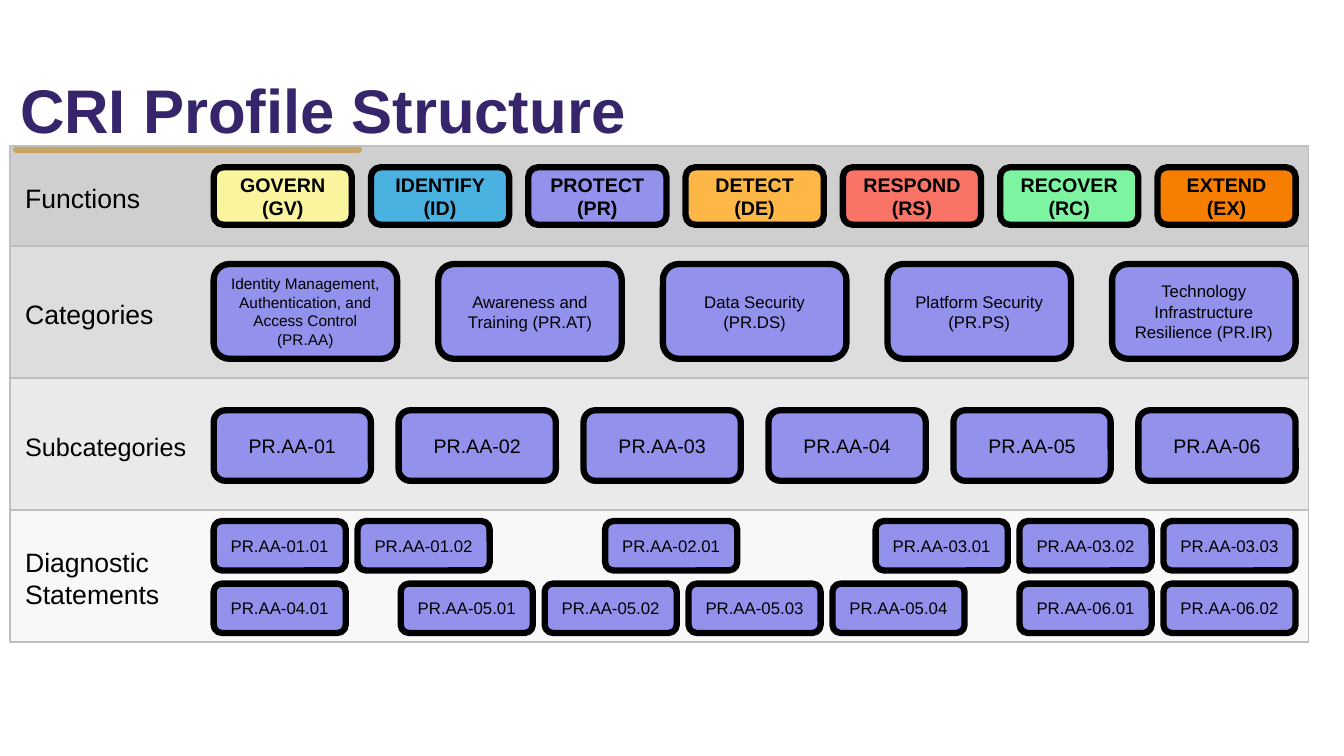
"""Build the CRI Profile Structure slide, with lengths as percentages of the slide's size."""
from dataclasses import dataclass
from typing import Any

from lxml.etree import SubElement
from pptx import Presentation
from pptx.dml.color import RGBColor
from pptx.enum.shapes import MSO_CONNECTOR, MSO_SHAPE
from pptx.enum.text import MSO_ANCHOR, PP_ALIGN
from pptx.oxml import parse_xml
from pptx.oxml.ns import nsdecls, qn
from pptx.util import Inches, Pt

WIDE, HIGH = 13.33, 7.5
LEFT, SPAN = 15.9, 80.5
EDGE, FULL = 0.75, 96.62
HUES = {
    "black": "000000", "title": "36256B", "gold": "F0A31F", "rule": "BFBFBF",
    "violet": "9292EC", "yellow": "F9F49D", "blue": "4AB2E1", "amber": "FCB746",
    "red": "F97367", "green": "7DF4A0", "orange": "F67E00",
    "dark": "A6A6A6", "mid": "BFBFBF", "light": "D9D9D9", "pale": "F2F2F2",
}
SHADOW = (
    f'<a:effectLst {nsdecls("a")}><a:outerShdw blurRad="38100" dist="38100" '
    'dir="2700000" algn="tl"><a:srgbClr val="000000"><a:alpha val="43137"/>'
    '</a:srgbClr></a:outerShdw></a:effectLst>'
)


@dataclass
class Band:
    label: str
    top: float
    high: float
    fill: str
    size: int = 19
    tall: float = 5.6


@dataclass
class Card:
    text: str
    slot: float
    fill: str = "violet"
    size: int = 0


@dataclass
class Row:
    top: float
    high: float
    wide: float
    size: int
    cards: list[Card]
    bold: bool = False


BANDS = [
    Band("Functions", 19.33, 13.2, "dark"),
    Band("Categories", 32.53, 17.47, "mid"),
    Band("Subcategories", 50, 17.47, "light", 18, 5.33),
    Band("Diagnostic Statements", 67.47, 17.47, "pale", 19, 9.87),
]
ROWS = [
    Row(22.13, 7.6, 10.28, 14, [
        Card("GOVERN (GV)", 0, "yellow"), Card("IDENTIFY (ID)", 1, "blue"),
        Card("PROTECT (PR)", 2), Card("DETECT (DE)", 3, "amber"),
        Card("RESPOND (RS)", 4, "red"), Card("RECOVER (RC)", 5, "green"),
        Card("EXTEND (EX)", 6, "orange")], True),
    Row(34.93, 12.53, 13.65, 12, [
        Card("Identity Management, Authentication, and Access Control (PR.AA)", 0, size=11),
        Card("Awareness and Training (PR.AT)", 1), Card("Data Security (PR.DS)", 2),
        Card("Platform Security (PR.PS)", 3),
        Card("Technology Infrastructure Resilience (PR.IR)", 4)]),
    Row(54.27, 9.33, 11.7, 14, [Card(f"PR.AA-0{n + 1}", n) for n in range(6)]),
    Row(68.93, 6.53, 9.83, 12, [
        Card(f"PR.AA-{code}", slot) for code, slot in (
            ("01.01", 0), ("01.02", 1), ("02.01", 2.72),
            ("03.01", 4.6), ("03.02", 5.6), ("03.03", 6.6))]),
    Row(77.2, 6.53, 9.83, 12, [
        Card(f"PR.AA-{code}", slot) for code, slot in (
            ("04.01", 0), ("05.01", 1.3), ("05.02", 2.3), ("05.03", 3.3),
            ("05.04", 4.3), ("06.01", 5.6), ("06.02", 6.6))]),
]


def place(*share: float) -> list[int]:
    """Turn alternating width and height percentages into lengths."""
    return [Inches(part * (HIGH if n % 2 else WIDE) / 100) for n, part in enumerate(share)]


def tint(name: str) -> RGBColor:
    """Look up a named colour."""
    return RGBColor.from_string(HUES[name])


def write(shape: Any, text: str, size: int, bold: bool = False, hue: str = "black") -> Any:
    """Fill a shape with one paragraph and return that paragraph."""
    shape.text_frame.word_wrap = True
    line = shape.text_frame.paragraphs[0]
    run = line.add_run()
    run.text = text
    for key, value in {"name": "Arial", "size": Pt(size), "bold": bold}.items():
        setattr(run.font, key, value)
    run.font.color.rgb = tint(hue)
    return line


def block(slide: Any, kind: Any, area: list[int], fill: str, edge: str, thick: float) -> Any:
    """Draw a filled and outlined shape without a shadow."""
    shape = slide.shapes.add_shape(kind, *area)
    shape.shadow.inherit = False
    shape.fill.solid()
    shape.fill.fore_color.rgb = tint(fill)
    shape.line.color.rgb = tint(edge)
    shape.line.width = Pt(thick)
    return shape


def stripe(slide: Any, band: Band) -> None:
    """Draw a translucent band and its shadowed label."""
    area = place(EDGE, band.top, FULL, band.high)
    shape = block(slide, MSO_SHAPE.RECTANGLE, area, band.fill, "rule", 1)
    color = shape.fill._xPr.find(f"{qn('a:solidFill')}/{qn('a:srgbClr')}")
    SubElement(color, qn("a:alpha"), val="53000")
    top = band.top + (band.high - band.tall) / 2 + 0.33
    label = slide.shapes.add_textbox(*place(1.13, top, 13.8, band.tall))
    line = write(label, band.label, band.size)
    line.runs[0].font._element.find(qn("a:solidFill")).addnext(parse_xml(SHADOW))


def spread(slide: Any, row: Row) -> None:
    """Draw a row of cards spread from the left to the right edge of the grid."""
    step = (SPAN - row.wide) / row.cards[-1].slot
    for card in row.cards:
        area = place(LEFT + card.slot * step, row.top, row.wide, row.high)
        shape = block(slide, MSO_SHAPE.ROUNDED_RECTANGLE, area, card.fill, "black", 4.5)
        shape.text_frame.vertical_anchor = MSO_ANCHOR.MIDDLE
        write(shape, card.text, card.size or row.size, row.bold).alignment = PP_ALIGN.CENTER


def accent(slide: Any) -> None:
    """Draw the gold line under the title."""
    line = slide.shapes.add_connector(MSO_CONNECTOR.STRAIGHT, *place(1.2, 19.8, 26.7, 19.8))
    line.line.color.rgb = tint("gold")
    line.line.width = Pt(4.5)
    line.line._ln.set("cap", "rnd")
    SubElement(line._element.spPr, qn("a:effectLst"))


def main() -> None:
    """Build and save the slide."""
    deck = Presentation()
    deck.slide_width, deck.slide_height = place(100, 100)
    slide = deck.slides.add_slide(deck.slide_layouts[6])
    accent(slide)
    for band in BANDS:
        stripe(slide, band)
    title = slide.shapes.add_textbox(*place(EDGE, 5.33, 86.27, 19.33))
    title.text_frame.vertical_anchor = MSO_ANCHOR.MIDDLE
    write(title, "CRI Profile Structure", 44, True, "title").line_spacing = 0.9
    for row in ROWS:
        spread(slide, row)
    deck.save("out.pptx")


if __name__ == "__main__":
    main()
